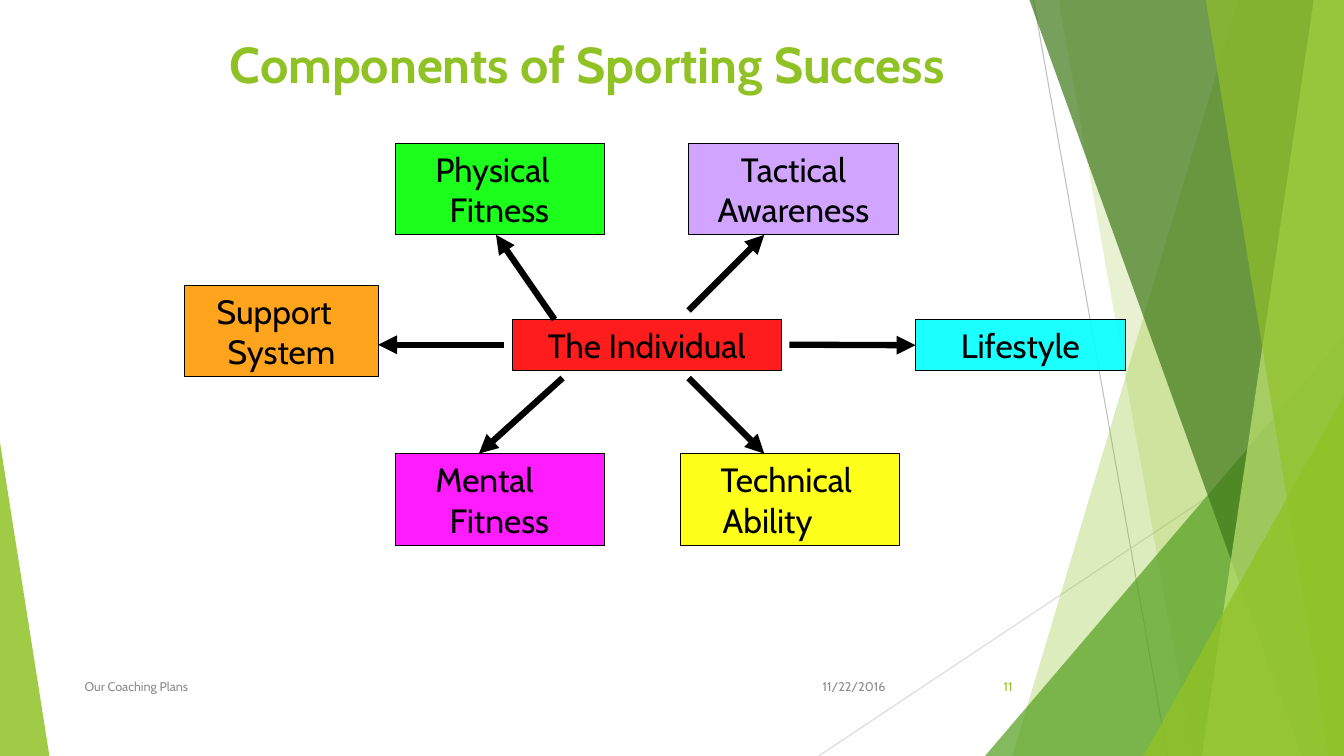
from lxml import etree
from pptx import Presentation
from pptx.dml.color import RGBColor
from pptx.enum import shapes, text
from pptx.oxml import ns
from pptx.util import Inches, Pt

HUE = {
    "lime": "90C226", "leaf": "54A021", "moss": "3F7819", "pale": "C0E474",
    "grey": "8C8C8C", "ash": "BFBFBF", "mist": "D9D9D9", "black": "000000",
    "green": "00FF00", "mauve": "CC99FF", "red": "FF0000", "cyan": "00FFFF",
    "yellow": "FFFF00", "pink": "FF00FF", "orange": "FF9900",
}
FONT = "Cabin"


def paint(shape, hue, alpha):
    shape.shadow.inherit = False
    shape.fill.solid()
    shape.fill.fore_color.rgb = RGBColor.from_string(HUE[hue])
    color = shape.fill._xPr.find(".//" + ns.qn("a:srgbClr"))
    etree.SubElement(color, ns.qn("a:alpha"), val=str(alpha * 1000))


def draw_line(start, end, hue, width):
    line = slide.shapes.add_connector(
        shapes.MSO_CONNECTOR.STRAIGHT, *[Inches(v) for v in start + end])
    line.line.color.rgb = RGBColor.from_string(HUE[hue])
    line.line.width = Pt(width)
    etree.SubElement(line._element.spPr, ns.qn("a:effectLst"))
    return line


deck = Presentation()
deck.slide_width, deck.slide_height = Inches(13.33), Inches(7.5)
slide = deck.slides.add_slide(deck.slide_layouts[5])

draw_line((10.25, 0), (11.58, 7.5), "ash", 0.75)
draw_line((13.33, 4.03), (8.12, 7.5), "mist", 0.75)

bands = [
    (12.28, 10.04, "lime", 30),
    (10.5, 11.83, "lime", 20),
    (9.77, 3.33, 3.56, 4.17, 1, "leaf", 72),
    (10.21, 12.91, "moss", 70),
    (13.03, 11.92, "pale", 70),
    (11.96, 13.18, "lime", 65),
    (11.34, 3.93, 1.99, 3.57, 1, "lime", 80),
    (0, 4.39, 0.49, 3.11, 0, "lime", 85),
]
for *geo, hue, alpha in bands:
    if len(geo) == 2:
        top, foot = geo
        pen = slide.shapes.build_freeform(Inches(top), 0)
        pen.add_line_segments([(Inches(x), Inches(y)) for x, y in
                               ((13.33, 0), (13.33, 7.5), (foot, 7.5))])
        band = pen.convert_to_shape()
    else:
        *box, apex = geo
        band = slide.shapes.add_shape(
            shapes.MSO_SHAPE.ISOSCELES_TRIANGLE, *[Inches(v) for v in box])
        band.adjustments[0] = apex
    paint(band, hue, alpha)
    band.line.fill.background()

title = slide.shapes.title
title.left, title.top = Inches(2.18), Inches(0.28)
title.width, title.height = Inches(8.5), Inches(0.95)
title.text_frame.text = "Components of Sporting Success"
title.text_frame.vertical_anchor = text.MSO_ANCHOR.TOP
head = title.text_frame.paragraphs[0]
head.alignment = text.PP_ALIGN.LEFT
head.font.name, head.font.size, head.font.bold = FONT, Pt(36), True
head.font.color.rgb = RGBColor.from_string(HUE["lime"])

LEFT, RIGHT = text.PP_ALIGN.LEFT, text.PP_ALIGN.RIGHT
for words, x, width, align, hue in [
    ("11/22/2016", 7.88, 1, RIGHT, "grey"),
    ("Our Coaching Plans", 0.74, 6.89, LEFT, "grey"),
    ("11", 9.39, 0.75, RIGHT, "lime"),
]:
    note = slide.shapes.add_textbox(Inches(x), Inches(6.61), Inches(width), Inches(0.4))
    note.text_frame.word_wrap = True
    note.text_frame.vertical_anchor = text.MSO_ANCHOR.MIDDLE
    note.text_frame.text = words
    para = note.text_frame.paragraphs[0]
    para.alignment = align
    para.font.name, para.font.size = FONT, Pt(9)
    para.font.color.rgb = RGBColor.from_string(HUE[hue])

boxes = {}
for words, x, y, width, height, hue, dent in [
    ("Physical Fitness", 3.92, 1.42, 2.08, 0.91, "green", (0.3, 0.44)),
    ("Tactical Awareness", 6.83, 1.42, 2.08, 0.91, "mauve", None),
    ("The Individual", 5.08, 3.17, 2.67, 0.51, "red", None),
    ("Lifestyle", 9.08, 3.17, 2.08, 0.51, "cyan", None),
    ("Technical Ability", 6.75, 4.5, 2.17, 0.91, "yellow", (0.3, 0.32)),
    ("Mental Fitness", 3.92, 4.5, 2.08, 0.91, "pink", (0.3, 0.44)),
    ("Support System", 1.83, 2.83, 1.92, 0.91, "orange", (0.22, 0.33)),
]:
    box = slide.shapes.add_shape(
        shapes.MSO_SHAPE.RECTANGLE, *[Inches(v) for v in (x, y, width, height)])
    paint(box, hue, 89)
    box.line.color.rgb = RGBColor.from_string(HUE["black"])
    box.line.width = Pt(0.75)
    box.text_frame.word_wrap = True
    box.text_frame.text = words
    para = box.text_frame.paragraphs[0]
    para.alignment = LEFT if dent else text.PP_ALIGN.CENTER
    if dent:
        first, rest = dent
        props = para._p.get_or_add_pPr()
        props.set("marL", str(Inches(rest)))
        props.set("indent", str(Inches(first) - Inches(rest)))
    para.font.name, para.font.size = FONT, Pt(24)
    para.font.color.rgb = RGBColor.from_string(HUE["black"])
    boxes[words] = box

for start, end, goal in [
    ((5.5, 3.17), (4.92, 2.33), None),
    ((6.83, 3.08), (7.58, 2.33), None),
    ((7.83, 3.42), (9.08, 3.42), "Lifestyle"),
    ((5, 3.42), (3.75, 3.42), None),
    ((5.58, 3.75), (4.75, 4.5), None),
    ((6.83, 3.75), (7.58, 4.5), None),
]:
    arrow = draw_line(start, end, "black", 4.5)
    etree.SubElement(arrow.line._ln, ns.qn("a:tailEnd"), type="triangle")
    if goal:
        arrow.end_connect(boxes[goal], 1)

deck.save("out.pptx")
